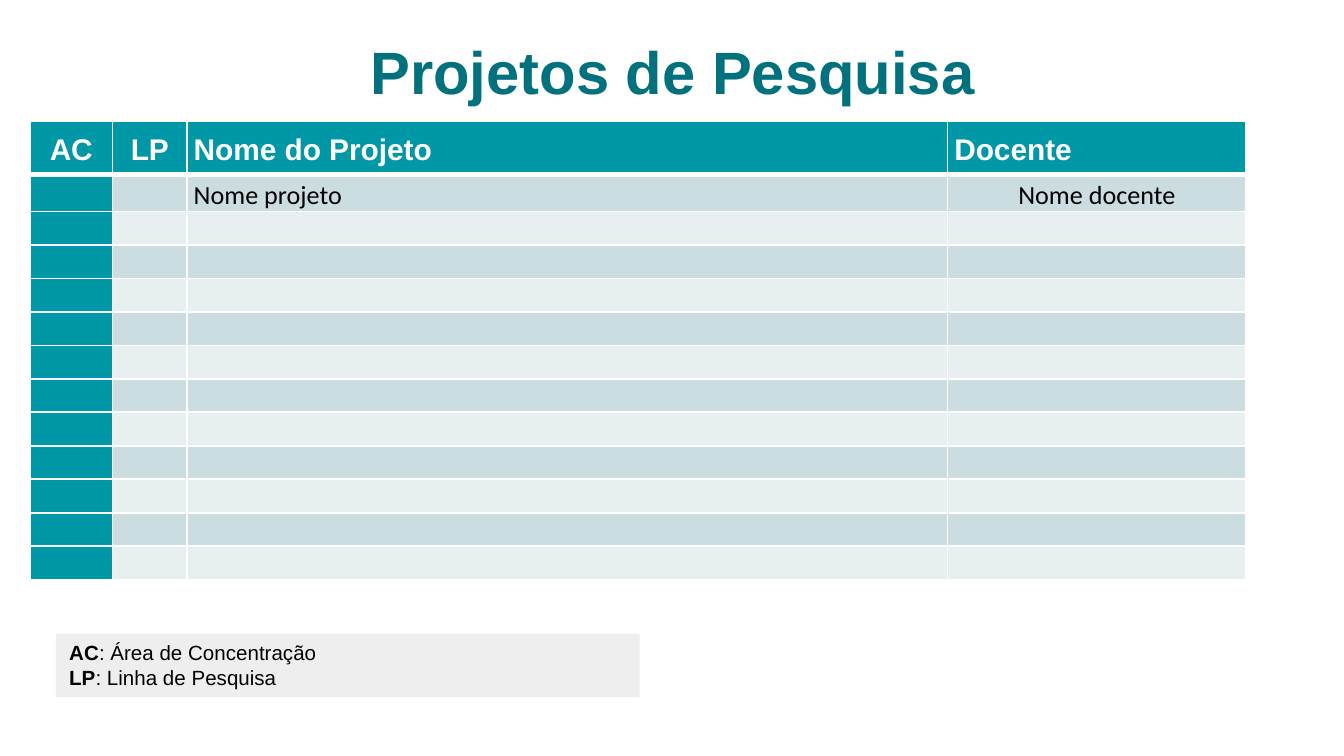
from lxml.etree import SubElement
from pptx import Presentation
from pptx.dml.color import RGBColor
from pptx.enum.shapes import MSO_SHAPE as Shape
from pptx.enum.text import MSO_ANCHOR as Anchor, PP_ALIGN as Align
from pptx.oxml.ns import qn
from pptx.util import Pt

TEAL, DARK, WHITE, BLACK = "0097A7", "00717D", "FFFFFF", "000000"
BANDS = ["CCDDE1", "E7EFF1"]
PALE = "EEEEEE"


def color(code):
    return RGBColor.from_string(code)


def border(cell, side, width):
    line = SubElement(cell._tc.get_or_add_tcPr(), qn(f"a:{side}"), w=str(Pt(width)))
    fill = SubElement(line, qn("a:solidFill"))
    SubElement(fill, qn("a:srgbClr"), val=WHITE)


class Board:
    font = "Arial"

    def __init__(self, deck):
        self.slide = deck.slides.add_slide(deck.slide_layouts[5])

    def style(self, run, size, code, bold=False, name=None):
        font = run.font
        font.name, font.size, font.bold = name or self.font, Pt(size), bold
        font.color.rgb = color(code)

    def title(self, text, left, top, width, height):
        box = self.slide.shapes.title
        box.left, box.top, box.width, box.height = map(Pt, (left, top, width, height))
        frame = box.text_frame
        frame.text = text
        frame.vertical_anchor = Anchor.BOTTOM
        frame.margin_left = frame.margin_right = Pt(7.2)
        frame.margin_top = frame.margin_bottom = Pt(7.2)
        para = frame.paragraphs[0]
        para.alignment = Align.CENTER
        self.style(para.runs[0], 32, DARK, True)

    def cell(self, cell, text, align, head, fill, above):
        """Fill one cell; above is the width of its top border."""
        cell.margin_left = cell.margin_right = Pt(3.6)
        cell.margin_top = cell.margin_bottom = 0
        cell.vertical_anchor = Anchor.MIDDLE
        for side, width in (("lnL", 1), ("lnR", 1), ("lnT", above), ("lnB", 3 if head else 1)):
            border(cell, side, width)
        cell.fill.solid()
        cell.fill.fore_color.rgb = color(fill)
        cell.text_frame.text = text
        para = cell.text_frame.paragraphs[0]
        para.alignment, para.line_spacing = align, 1.15
        if not text:
            # Keeps an empty row from growing to the default text size
            SubElement(para._p, qn("a:endParaRPr"), sz="1400")
        elif head:
            self.style(para.runs[0], 16, WHITE, True)
        else:
            self.style(para.runs[0], 14, BLACK, name="Calibri")

    def table(self, rows, left, top, widths, heights):
        """Draw rows of (text, alignment) with a teal first row and column."""
        table = self.slide.shapes.add_table(
            len(rows), len(widths), Pt(left), Pt(top),
            Pt(sum(widths)), Pt(sum(heights))).table
        for col, width in zip(table.columns, widths):
            col.width = Pt(width)
        for i, (row, height) in enumerate(zip(rows, heights)):
            table.rows[i].height = Pt(height)
            for j, (text, align) in enumerate(row):
                fill = TEAL if i == 0 or j == 0 else BANDS[(i - 1) % 2]
                self.cell(table.cell(i, j), text, align, i == 0, fill, 3 if i == 1 else 1)

    def legend(self, items, left, top, width, height):
        box = self.slide.shapes.add_shape(
            Shape.RECTANGLE, Pt(left), Pt(top), Pt(width), Pt(height))
        box.shadow.inherit = False
        box.fill.solid()
        box.fill.fore_color.rgb = color(PALE)
        box.line.fill.background()
        frame = box.text_frame
        frame.vertical_anchor = Anchor.TOP
        frame.text = "\n".join(key for key, _ in items)
        for para, (_, text) in zip(frame.paragraphs, items):
            para.alignment = Align.LEFT
            self.style(para.runs[0], 11, BLACK, True)
            run = para.add_run()
            run.text = f": {text}"
            self.style(run, 11, BLACK)


def main():
    deck = Presentation()
    deck.slide_width, deck.slide_height = Pt(720), Pt(405)
    board = Board(deck)
    board.title("Projetos de Pesquisa", 21, 22.3, 679, 41.8)

    left, mid = Align.LEFT, Align.CENTER
    head = [("AC", mid), ("LP", mid), ("Nome do Projeto", left), ("Docente", left)]
    first = [("", left), ("", left), ("Nome projeto", left), ("Nome docente", mid)]
    blank = [("", left)] * 4
    rows = [head, first] + [blank] * 11
    board.table(rows, 16, 64.8, [44.4, 39.8, 407.5, 160], [28.8] + [17.95] * 12)

    board.legend([("AC", "Área de Concentração"), ("LP", "Linha de Pesquisa")],
                 30, 339.6, 312.7, 33.9)
    deck.save("out.pptx")


if __name__ == "__main__":
    main()
